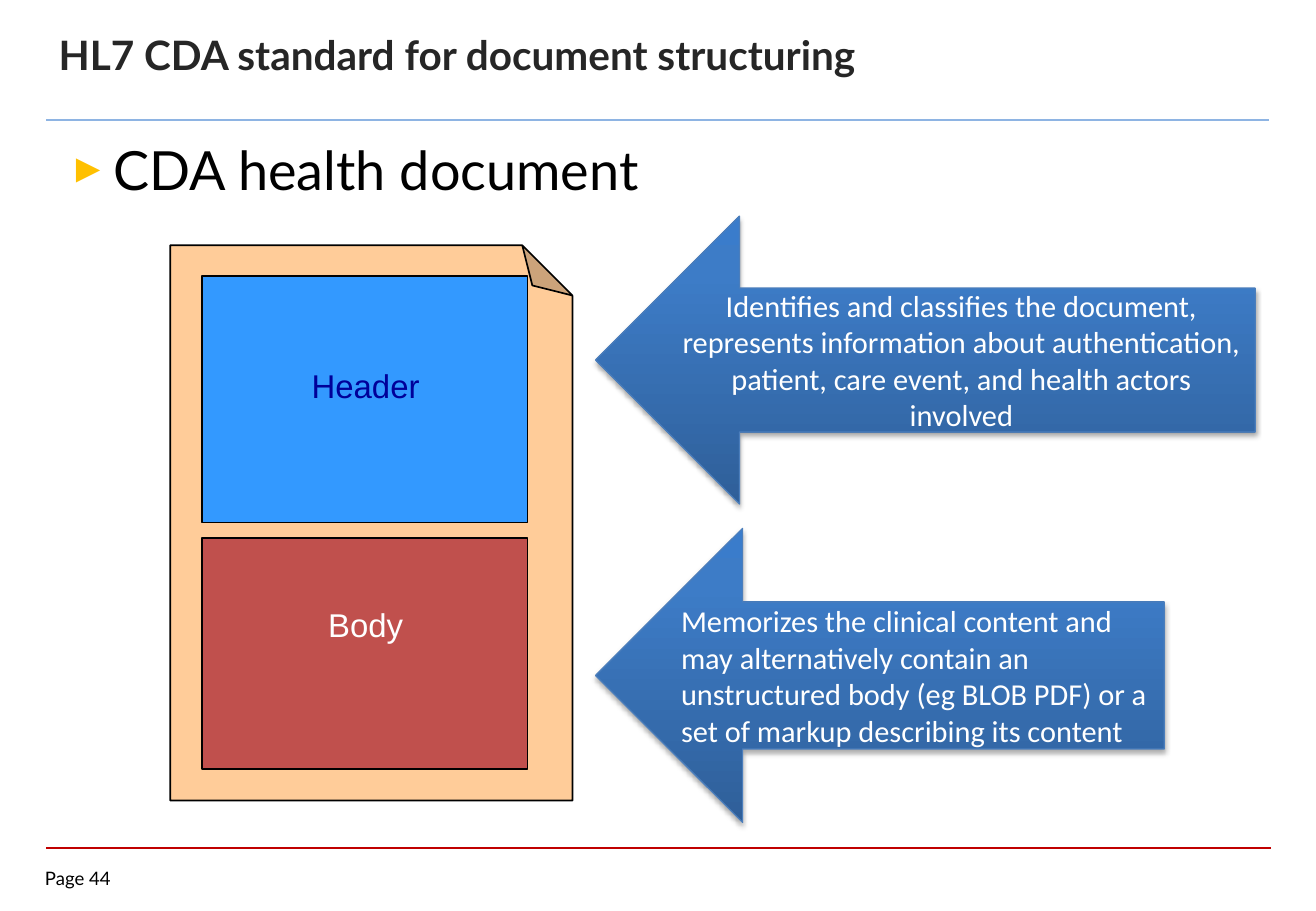
import pptx
import pptx.util
import pptx.dml.color
import pptx.enum.shapes
import pptx.enum.text
import pptx.oxml
import pptx.oxml.ns

Cm, Pt = pptx.util.Cm, pptx.util.Pt
SHAPE = pptx.enum.shapes.MSO_SHAPE
ALIGN = pptx.enum.text.PP_ALIGN
ANCHOR = pptx.enum.text.MSO_ANCHOR
NS = pptx.oxml.ns.nsdecls("a")

SIZE = (27.51, 19.05)
TITLE = ("HL7 CDA standard for document structuring", (0.97, 0.23, 25.2, 1.8))
TOPIC = ("CDA health document", (1.17, 2.72, 24.99, 14.3))
PAGE = ("Page 44", (0.94, 18.14, 1.85, 0.56))
RULES = [(17.73, 26.57, "C00000", 1), (2.51, 26.52, "8EB4E3", 1.5)]
SHEET = (3.56, 5.13, 8.41, 11.61)
PARTS = [
    ("Header", 5.77, 5.16, 7.52, "3399FF", "000099"),
    ("Body", 11.25, 4.83, 12.52, "C0504D", "FFFFFF"),
]
NOTES = [
    ("Identifies and classifies the document, represents information about "
     "authentication, patient, care event, and health actors involved",
     (12.45, 4.52, 13.79, 6.02), ALIGN.CENTER),
    ("Memorizes the clinical content and may alternatively contain an "
     "unstructured body (eg BLOB PDF) or a set of markup describing its content",
     (12.45, 11.05, 11.89, 6.15), ALIGN.LEFT),
]
STOPS = [(0, "2F5F99"), (80, "3D7CC7"), (100, "3A7CCB")]


def color(text):
    return pptx.dml.color.RGBColor.from_string(text)


def xml(text):
    return pptx.oxml.parse_xml(text)


def place(shape, box):
    shape.left, shape.top, shape.width, shape.height = [Cm(n) for n in box]


def write(shape, text, face, size, ink, align=ALIGN.LEFT, bold=False):
    frame = shape.text_frame
    frame.text = text
    frame.word_wrap = True
    para = frame.paragraphs[0]
    para.alignment = align
    font = para.runs[0].font
    font.name, font.size, font.bold = face, Pt(size), bold
    font.color.rgb = color(ink)
    return frame


def draw(slide, kind, box, fill, edge="000000", width=1):
    shape = slide.shapes.add_shape(kind, *[Cm(n) for n in box])
    shape.shadow.inherit = False
    shape.fill.solid()
    shape.fill.fore_color.rgb = color(fill)
    shape.line.color.rgb = color(edge)
    shape.line.width = Pt(width)
    return shape


def label(slide, box):
    return slide.shapes.add_textbox(*[Cm(n) for n in box])


def shade(shape):
    props = shape._element.spPr
    stops = "".join(
        f'<a:gs pos="{pos * 1000}"><a:srgbClr val="{tone}"/></a:gs>'
        for pos, tone in STOPS)
    props.replace(props.find(pptx.oxml.ns.qn("a:solidFill")), xml(
        f'<a:gradFill {NS} rotWithShape="1"><a:gsLst>{stops}</a:gsLst>'
        '<a:lin ang="16200000" scaled="0"/></a:gradFill>'))
    props.replace(props.find(pptx.oxml.ns.qn("a:effectLst")), xml(
        f'<a:effectLst {NS}><a:outerShdw blurRad="39370" dist="22860" '
        'dir="5400000" rotWithShape="0"><a:srgbClr val="000000">'
        '<a:alpha val="35000"/></a:srgbClr></a:outerShdw></a:effectLst>'))


def main():
    deck = pptx.Presentation()
    deck.slide_width, deck.slide_height = [Cm(n) for n in SIZE]
    slide = deck.slides.add_slide(deck.slide_layouts[1])

    for top, right, tone, width in RULES:
        rule = slide.shapes.add_connector(
            pptx.enum.shapes.MSO_CONNECTOR.STRAIGHT,
            Cm(0.97), Cm(top), Cm(right), Cm(top))
        rule.line.color.rgb = color(tone)
        rule.line.width = Pt(width)
        rule._element.spPr.append(xml(f"<a:effectLst {NS}/>"))

    text, box = PAGE
    frame = write(label(slide, box), text, "Lato", 11, "000000")
    frame.margin_left = frame.margin_right = 0
    frame.margin_top = frame.margin_bottom = 0
    frame.word_wrap = False

    text, box = TITLE
    title = slide.shapes.title
    place(title, box)
    frame = write(title, text, "Lato", 24, "262626", bold=True)
    frame.vertical_anchor = ANCHOR.MIDDLE
    frame.auto_size = pptx.enum.text.MSO_AUTO_SIZE.NONE

    text, box = TOPIC
    topic = slide.placeholders[1]
    place(topic, box)
    frame = write(topic, text, "Lato", 32, "000000")
    frame.auto_size = pptx.enum.text.MSO_AUTO_SIZE.NONE
    para = frame.paragraphs[0]
    para.space_before = Pt(0)
    props = para._p.get_or_add_pPr()
    props.set("marL", str(Cm(0.95)))
    props.set("indent", str(-Cm(0.95)))
    for item in ('buClr {}><a:srgbClr val="FFC000"/></a:buClr>',
                 'buSzPct {} val="75000"/>',
                 'buFont {} typeface="Arial"/>',
                 'buChar {} char="►"/>'):
        props.append(xml("<a:" + item.format(NS)))

    sheet = draw(slide, SHAPE.FOLDED_CORNER, SHEET, "FFCC99")
    props = sheet._element.spPr
    props.xfrm.set("flipV", "1")
    guides = props.find(".//" + pptx.oxml.ns.qn("a:avLst"))
    guides.append(xml(f'<a:gd {NS} name="adj" fmla="val 12500"/>'))

    for text, top, height, line, fill, ink in PARTS:
        draw(slide, SHAPE.RECTANGLE, (4.22, top, 6.81, height), fill)
        write(label(slide, (4.65, line, 5.99, 1.75)),
              text, "Arial", 19.5, ink, ALIGN.CENTER)

    for text, box, align in NOTES:
        arrow = draw(slide, SHAPE.LEFT_ARROW, box, STOPS[0][1], "4B7EBC", 0.75)
        shade(arrow)
        frame = write(arrow, text, "Calibri", 18, "FFFFFF", align)
        frame.vertical_anchor = ANCHOR.MIDDLE

    deck.save("out.pptx")


if __name__ == "__main__":
    main()
